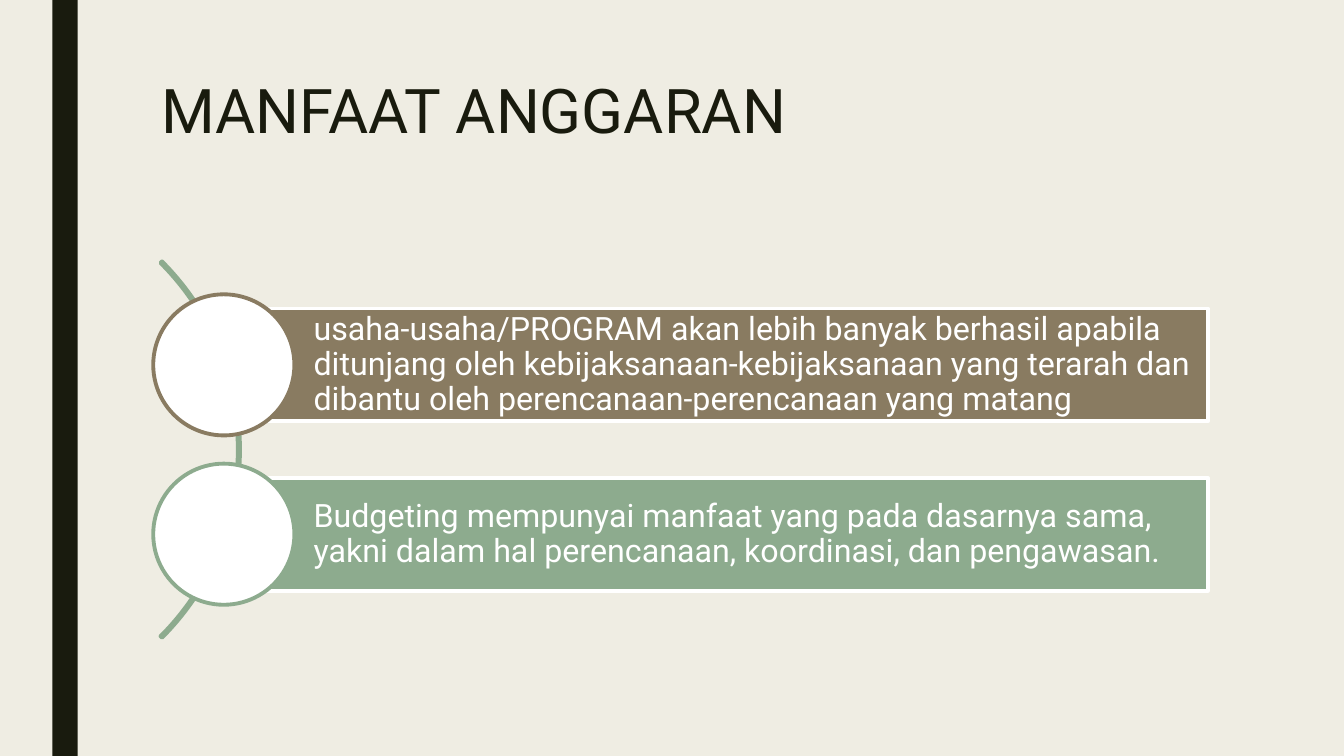
from dataclasses import dataclass

from pptx import Presentation
from pptx.dml.color import RGBColor
from pptx.enum.shapes import MSO_SHAPE as Preset
from pptx.enum.text import MSO_ANCHOR as Anchor, PP_ALIGN as Align
from pptx.util import Inches, Pt


@dataclass(frozen=True)
class Theme:
    font: str = "Roboto"
    paper: str = "EFEDE3"
    ink: str = "191B0E"
    white: str = "FFFFFF"
    brown: str = "897B61"
    green: str = "8DAB8E"
    title_size: float = 44
    body_size: float = 23
    line_width: float = 2.75


@dataclass(frozen=True)
class Box:
    left: float
    top: float
    width: float
    height: float

    def lengths(self):
        return [Inches(n) for n in (self.left, self.top, self.width, self.height)]


THEME = Theme()
BENEFITS = [
    ("usaha-usaha/PROGRAM akan lebih banyak berhasil apabila ditunjang oleh "
     "kebijaksanaan-kebijaksanaan yang terarah dan dibantu oleh "
     "perencanaan-perencanaan yang matang", THEME.brown),
    ("Budgeting mempunyai manfaat yang pada dasarnya sama, yakni dalam hal "
     "perencanaan, koordinasi, dan pengawasan.", THEME.green),
]


def add_preset(page, preset, box, fill=None, line=None):
    shape = page.shapes.add_shape(preset, *box.lengths())
    shape.shadow.inherit = False
    if fill:
        shape.fill.solid()
        shape.fill.fore_color.rgb = RGBColor.from_string(fill)
    else:
        shape.fill.background()
    if line:
        shape.line.color.rgb = RGBColor.from_string(line)
        shape.line.width = Pt(THEME.line_width)
    else:
        shape.line.fill.background()
    return shape


def write(frame, text, size, color, spacing):
    frame.word_wrap = True
    frame.text = text
    para = frame.paragraphs[0]
    para.alignment = Align.LEFT
    para.line_spacing = spacing
    font = para.runs[0].font
    font.name = THEME.font
    font.size = Pt(size)
    font.color.rgb = RGBColor.from_string(color)


def add_backdrop(page, box):
    """Colour the page and draw the dark stripe in the given box."""
    page.background.fill.solid()
    page.background.fill.fore_color.rgb = RGBColor.from_string(THEME.paper)
    add_preset(page, Preset.RECTANGLE, box, THEME.ink)


def add_title(page, box, text):
    frame = page.shapes.add_textbox(*box.lengths()).text_frame
    frame.vertical_anchor = Anchor.TOP
    write(frame, text, THEME.title_size, THEME.ink, 0.89)


def add_benefit(page, box, text, color):
    """Draw a bar with a circle centred on its left edge."""
    bar = add_preset(page, Preset.RECTANGLE, box, color, THEME.white)
    frame = bar.text_frame
    frame.vertical_anchor = Anchor.MIDDLE
    frame.margin_left = Inches(0.89)
    frame.margin_top = frame.margin_right = frame.margin_bottom = Inches(0.06)
    write(frame, text, THEME.body_size, THEME.white, 0.9)

    diameter = box.height * 1.25
    circle = Box(box.left - diameter / 2, box.top + (box.height - diameter) / 2,
                 diameter, diameter)
    add_preset(page, Preset.OVAL, circle, THEME.white, color)


def add_benefit_list(page, box, benefits):
    """Stack the bars evenly in the box, in front of a curve to their left."""
    bar_height, pitch, diameter = 1.12, 1.68, 5.28
    curve = Box(box.left + 0.16 - diameter,
                box.top + (box.height - diameter) / 2, diameter, diameter)
    arc = add_preset(page, Preset.BLOCK_ARC, curve, line=THEME.green)
    # Start and end angles (315° and 45°), then the band thickness
    for index, value in enumerate((189, 27, 0.004)):
        arc.adjustments[index] = value

    for index, (text, color) in enumerate(benefits):
        bar = Box(box.left, box.top + index * pitch, box.width, bar_height)
        add_benefit(page, bar, text, color)


def main():
    deck = Presentation()
    deck.slide_width, deck.slide_height = Inches(13.33), Inches(7.5)
    page = deck.slides.add_slide(deck.slide_layouts[6])
    add_backdrop(page, Box(0.52, 0, 0.25, 7.5))
    add_title(page, Box(1.5, 0.75, 10.5, 1.62), "MANFAAT ANGGARAN")
    add_benefit_list(page, Box(2.22, 3.06, 9.76, 2.8), BENEFITS)
    deck.save("out.pptx")


if __name__ == "__main__":
    main()
